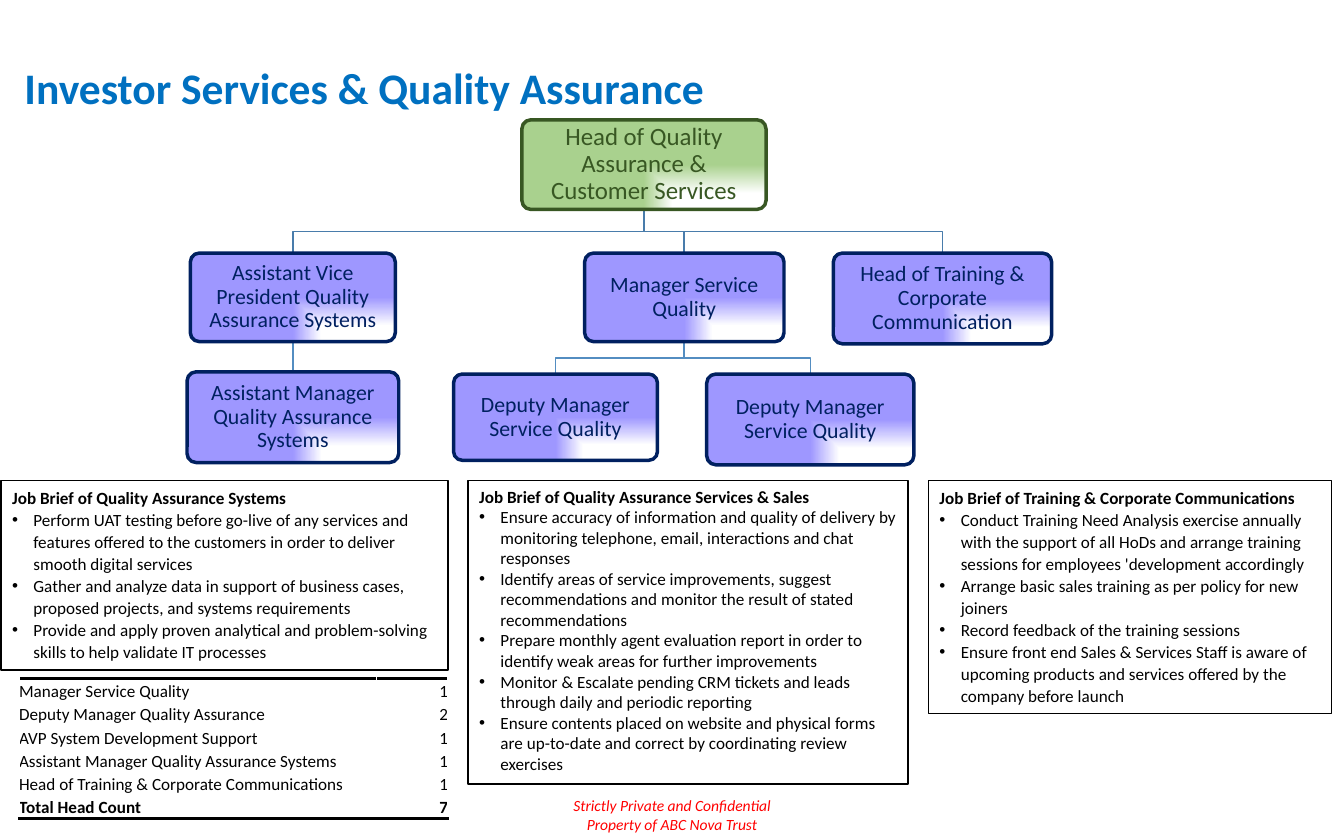
from lxml import etree
from pptx import Presentation
from pptx.dml.color import RGBColor
from pptx.enum.shapes import MSO_CONNECTOR, MSO_SHAPE
from pptx.enum.text import MSO_ANCHOR, PP_ALIGN
from pptx.oxml import parse_xml
from pptx.oxml.ns import nsdecls, qn
from pptx.util import Inches, Pt

ROUNDED, RECTANGLE = MSO_SHAPE.ROUNDED_RECTANGLE, MSO_SHAPE.RECTANGLE
STRAIGHT = MSO_CONNECTOR.STRAIGHT
LEFT, CENTER, RIGHT = PP_ALIGN.LEFT, PP_ALIGN.CENTER, PP_ALIGN.RIGHT
TOP, MIDDLE, BOTTOM = MSO_ANCHOR.TOP, MSO_ANCHOR.MIDDLE, MSO_ANCHOR.BOTTOM
COLUMNS, ROWS = 120, 75
GREEN, DARK_GREEN = "A9D18E", "385723"
VIOLET, NAVY = "9E97FF", "002060"
UPPER_LINK, LOWER_LINK = "497CAB", "538DC1"

POSITIONS = {
    "head": ("Head of Quality Assurance & Customer Services", 46.6, 10.7, 21.8, 8),
    "avp": ("Assistant Vice President Quality Assurance Systems", 17, 22.6, 18.3, 7.9),
    "assistant": ("Assistant Manager Quality Assurance Systems", 16.7, 33.2, 18.9, 8.1),
    "manager": ("Manager Service Quality", 52.2, 22.6, 17.8, 7.9),
    "deputy one": ("Deputy Manager Service Quality", 40.5, 33.4, 18.2, 7.7),
    "deputy two": ("Deputy Manager Service Quality", 63.1, 33.4, 18.5, 8.1),
    "training": ("Head of Training & Corporate Communication", 74.4, 22.6, 19.5, 8.1),
}
REPORTS = {"head": ("avp", "manager", "training"), "avp": ("assistant",),
           "manager": ("deputy one", "deputy two")}
HEAD_COUNT = [
    ("Manager Service Quality", "1"),
    ("Deputy Manager Quality Assurance", "2"),
    ("AVP System Development Support", "1"),
    ("Assistant Manager Quality Assurance Systems", "1"),
    ("Head of Training & Corporate Communications", "1"),
    ("Total Head Count", "7"),
]
JOB_BRIEFS = [
    ((0.1, 42.9, 39.9, 16.9), 1.07, "Job Brief of Quality Assurance Systems", [
        "Perform UAT testing before go-live of any services and features offered to the customers in order to deliver smooth digital services",
        "Gather and analyze data in support of business cases, proposed projects, and systems requirements",
        "Provide and apply proven analytical and problem-solving skills to help validate IT processes"]),
    ((41.8, 42.9, 39.3, 27.1), 1.0, "Job Brief of Quality Assurance Services & Sales", [
        "Ensure accuracy of information and quality of delivery by monitoring telephone, email, interactions and chat responses",
        "Identify areas of service improvements, suggest recommendations and monitor the result of stated recommendations",
        "Prepare monthly agent evaluation report in order to identify weak areas for further improvements",
        "Monitor & Escalate pending CRM tickets and leads through daily and periodic reporting",
        "Ensure contents placed on website and physical forms are up-to-date and correct by coordinating review exercises"]),
    ((82.9, 42.9, 36, 20.8), 1.07, "Job Brief of Training & Corporate Communications", [
        "Conduct Training Need Analysis exercise annually with the support of all HoDs and arrange training sessions for employees 'development accordingly",
        "Arrange basic sales training as per policy for new joiners",
        "Record feedback of the training sessions",
        "Ensure front end Sales & Services Staff is aware of upcoming products and services offered by the company before launch"]),
]


def colour(value):
    """Turn a hex string into a colour."""
    return RGBColor.from_string(value)


def write(paragraph, text, size=11, color="000000", bold=False, italic=False,
          align=LEFT, spacing=1.0, bullet=False):
    """Write one formatted run into a paragraph."""
    if bullet:
        properties = paragraph._p.get_or_add_pPr()
        properties.set("marL", str(Inches(0.19)))
        properties.set("indent", str(-Inches(0.19)))
        etree.SubElement(properties, qn("a:buFont")).set("typeface", "Arial")
        etree.SubElement(properties, qn("a:buChar")).set("char", "•")
    paragraph.alignment = align
    paragraph.line_spacing = spacing
    run = paragraph.add_run()
    run.text = text
    font = run.font
    font.name, font.size, font.bold, font.italic = "Calibri", Pt(size), bold, italic
    font.color.rgb = colour(color)


def write_lines(frame, lines, anchor=TOP, inset=None, wrap=True):
    """Fill a text frame with (text, format) lines."""
    frame.word_wrap = wrap
    frame.vertical_anchor = anchor
    if inset is not None:
        frame.margin_left = frame.margin_right = Inches(inset)
        frame.margin_top = frame.margin_bottom = Inches(inset)
    for index, (text, style) in enumerate(lines):
        paragraph = frame.add_paragraph() if index else frame.paragraphs[0]
        write(paragraph, text, **style)


class OrganisationSlide:
    """Hold the grid and the slide, and draw each kind of element."""

    def __init__(self, presentation):
        """Add a blank slide and measure its grid."""
        self.slide = presentation.slides.add_slide(presentation.slide_layouts[6])
        self.shapes = self.slide.shapes
        self.column = presentation.slide_width / COLUMNS
        self.row = presentation.slide_height / ROWS

    def place(self, *lengths):
        """Turn alternating columns and rows into slide lengths."""
        units = (self.column, self.row)
        return [round(length * units[index % 2]) for index, length in enumerate(lengths)]

    def text(self, area, lines, **layout):
        """Add a text box."""
        box = self.shapes.add_textbox(*self.place(*area))
        write_lines(box.text_frame, lines, **layout)

    def panel(self, kind, area, line, width):
        """Add an outlined white shape without a shadow."""
        shape = self.shapes.add_shape(kind, *self.place(*area))
        shape.shadow.inherit = False
        shape.fill.solid()
        shape.fill.fore_color.rgb = colour("FFFFFF")
        shape.line.color.rgb = colour(line)
        shape.line.width = Pt(width)
        return shape

    def position(self, title, area, fill, ink, size, inset):
        """Add a position box that fades to white at its lower right corner."""
        shape = self.panel(ROUNDED, area, ink, 2.25)
        shape.adjustments[0] = 0.1
        stops = "".join(f'<a:gs pos="{share}000"><a:srgbClr val="{value}"/></a:gs>'
                        for share, value in ((0, "FFFFFF"), (36, "FFFFFF"), (100, fill)))
        properties = shape._element.spPr
        properties.replace(properties.find(qn("a:solidFill")), parse_xml(
            f'<a:gradFill {nsdecls("a")} rotWithShape="1"><a:gsLst>{stops}</a:gsLst>'
            '<a:path path="rect"><a:fillToRect l="100000" t="100000"/></a:path></a:gradFill>'))
        style = dict(size=size, color=ink, align=CENTER, spacing=0.9)
        write_lines(shape.text_frame, [(title, style)], MIDDLE, inset)

    def link(self, parent, child, line):
        """Join the foot of a parent box to the top of a child box."""
        start_column, start_row = parent[0] + parent[2] / 2, parent[1] + parent[3]
        end_column, end_row = child[0] + child[2] / 2, child[1]
        middle = (start_row + end_row) / 2
        start, end = self.place(start_column, start_row), self.place(end_column, end_row)
        if abs(start_column - end_column) < 0.1:
            shape = self.shapes.add_connector(STRAIGHT, *start, start[0], end[1])
            etree.SubElement(shape._element.spPr, qn("a:effectLst"))
        else:
            builder = self.shapes.build_freeform(*start)
            bends = [self.place(start_column, middle), self.place(end_column, middle), end]
            builder.add_line_segments(bends, close=False)
            shape = builder.convert_to_shape()
            shape.shadow.inherit = False
            shape.fill.background()
        shape.line.color.rgb = colour(line)
        shape.line.width = Pt(1)

    def brief(self, area, spacing, heading, duties):
        """Add a job brief with a bold heading and bullets."""
        shape = self.panel(RECTANGLE, area, "000000", 1)
        lines = [(heading, dict(bold=True, spacing=spacing))]
        lines += [(duty, dict(bullet=True, spacing=spacing)) for duty in duties]
        write_lines(shape.text_frame, lines)

    def table(self, area, widths, records):
        """Add a ruled table whose last record is the total."""
        last = len(records) - 1
        table = self.shapes.add_table(len(records), len(widths), *self.place(*area)).table
        table.first_row = table.horz_banding = False
        for column, width in zip(table.columns, widths):
            column.width = round(width * self.column)
        for index, record in enumerate(records):
            for cell, text, align in zip(table.rows[index].cells, record, (LEFT, RIGHT)):
                cell.fill.solid()
                cell.fill.fore_color.rgb = colour("FFFFFF")
                cell.vertical_anchor = BOTTOM
                cell.margin_left = cell.margin_right = cell.margin_top = cell.margin_bottom = 0
                write(cell.text_frame.paragraphs[0], text, bold=index == last, align=align)
                if index in (0, last):
                    side = "lnB" if index else "lnT"
                    cell._tc.get_or_add_tcPr().insert(0, parse_xml(
                        f'<a:{side} {nsdecls("a")} w="{Pt(2)}"><a:solidFill>'
                        f'<a:srgbClr val="000000"/></a:solidFill></a:{side}>'))


def main():
    """Build the organisation slide."""
    presentation = Presentation()
    presentation.slide_width, presentation.slide_height = Inches(12), Inches(7.5)
    chart = OrganisationSlide(presentation)
    footer = dict(size=10, color="FF0000", italic=True, align=CENTER)
    chart.text((50.1, 70.6, 19.8, 4.4), [("Strictly Private and Confidential", footer),
               ("Property of ABC Nova Trust", footer)], wrap=False)
    chart.text((1.2, 4.2, 90.5, 7.7), [("Investor Services & Quality Assurance", dict(
               size=28, color="0070C0", bold=True, spacing=0.9))], anchor=MIDDLE)
    for parent, children in REPORTS.items():
        for child in children:
            chart.link(POSITIONS[parent][1:], POSITIONS[child][1:],
                       UPPER_LINK if parent == "head" else LOWER_LINK)
    for name, (title, *area) in POSITIONS.items():
        look = (GREEN, DARK_GREEN, 16, 0.07) if name == "head" else (VIOLET, NAVY, 14, 0.06)
        chart.position(title, area, *look)
    chart.table((1.7, 60.6, 38.3, 12.5), (31.9, 6.4), HEAD_COUNT)
    for brief in JOB_BRIEFS:
        chart.brief(*brief)
    presentation.save("out.pptx")


if __name__ == "__main__":
    main()
